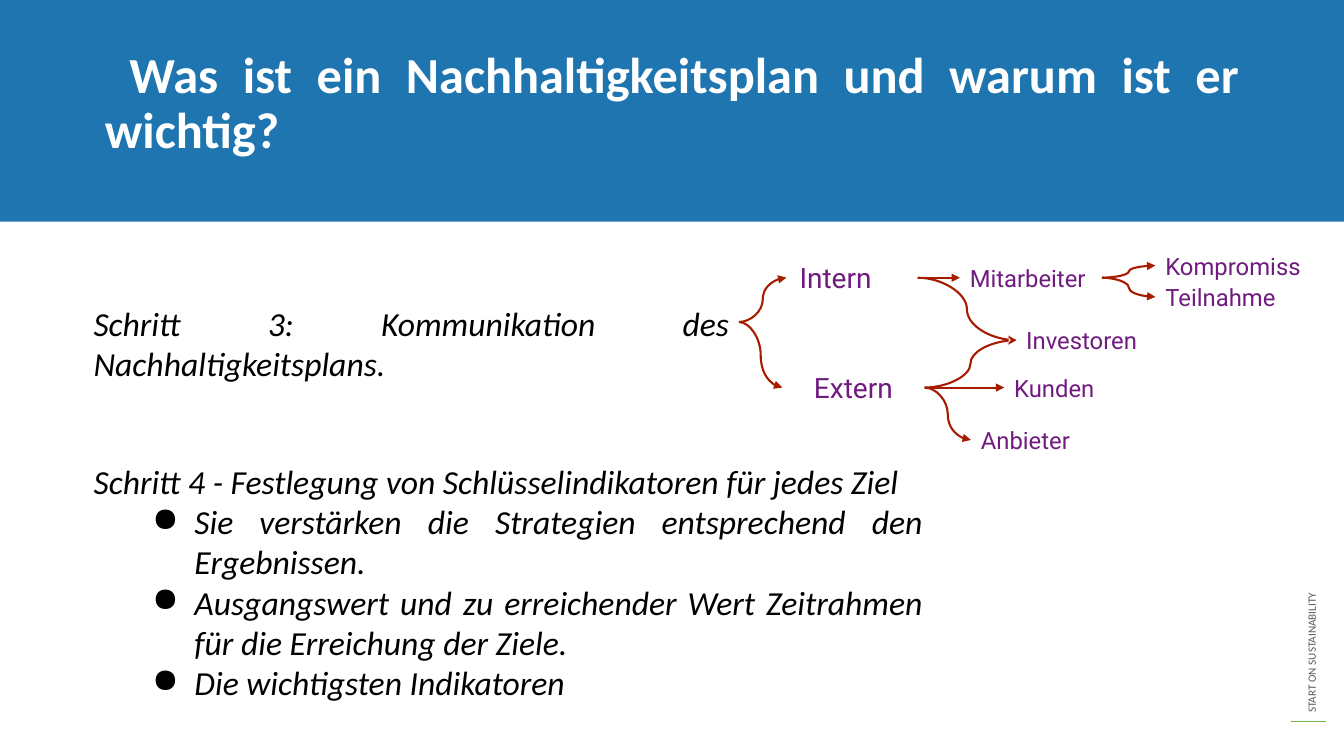
from pptx import Presentation
from pptx import util as u
from pptx.dml.color import RGBColor
from pptx.enum import shapes, text
from pptx.oxml import parse_xml
from pptx.oxml.ns import nsdecls, qn
from lxml import etree

Inches = u.Inches
BLUE, GREEN, PURPLE, RED = "1E75B0", "73B64B", "701C7F", "A61C00"
LEFT, CENTER, JUSTIFY = (text.PP_ALIGN.LEFT, text.PP_ALIGN.CENTER,
                         text.PP_ALIGN.JUSTIFY)
TOP, MIDDLE = text.MSO_ANCHOR.TOP, text.MSO_ANCHOR.MIDDLE


def write(box, place, lines, size, color, font="Calibri", align=LEFT,
          anchor=TOP, inset=(0.1, 0.05), bold=False, italic=False):
    """Place a text shape and fill it with one paragraph per line."""
    box.left, box.top, box.width, box.height = map(Inches, place)
    frame = box.text_frame
    frame.text = "\n".join(lines)
    frame.word_wrap = True
    frame.auto_size = text.MSO_AUTO_SIZE.NONE
    frame.vertical_anchor = anchor
    frame.margin_left = frame.margin_right = Inches(inset[0])
    frame.margin_top = frame.margin_bottom = Inches(inset[1])
    for para in frame.paragraphs:
        para.alignment = align
        for span in para.runs:
            span.font.name = font
            span.font.size = u.Pt(size)
            span.font.bold = bold
            span.font.italic = italic
            span.font.color.rgb = RGBColor.from_string(color)
    return box


def style_line(line, color, width, arrow=None):
    line.line.color.rgb = RGBColor.from_string(color)
    line.line.width = u.Pt(width)
    if arrow:
        tail = etree.SubElement(line.line._get_or_add_ln(), qn("a:tailEnd"))
        tail.set("type", arrow)
    etree.SubElement(line._element.spPr, qn("a:effectLst"))


deck = Presentation()
deck.slide_width, deck.slide_height = Inches(13.33), Inches(7.5)
page = deck.slides.add_slide(deck.slide_layouts[5])
items = page.shapes

# Side label and its green rule
label = write(items.add_textbox(0, 0, 0, 0), (10.78, 4.82, 4.46, 0.24),
              ["START ON SUSTAINABILITY"], 8, "595959")
label.rotation = 270
rule = items.add_connector(shapes.MSO_CONNECTOR.STRAIGHT, Inches(12.8),
                           Inches(7.16), Inches(13.15), Inches(7.16))
style_line(rule, GREEN, 1)

# Header band, with the title in front of it
band = items.add_shape(shapes.MSO_SHAPE.RECTANGLE, 0, 0,
                       deck.slide_width, Inches(2.2))
band.shadow.inherit = False
band.fill.solid()
band.fill.fore_color.rgb = RGBColor.from_string(BLUE)
band.line.fill.background()
title = write(items.title, (0.94, 0.45, 11.46, 0.88),
              [" Was ist ein Nachhaltigkeitsplan und warum ist er wichtig?"],
              36, "FFFFFF", align=JUSTIFY, bold=True)
title.text_frame.paragraphs[0].line_spacing = 0.9
title.text_frame.paragraphs[0].space_before = u.Pt(8)
band._element.addnext(title._element)

# Step 4 with its bullets
step4 = write(items.add_textbox(0, 0, 0, 0), (0.83, 4.52, 8.42, 2.52), [
    "Schritt 4 - Festlegung von Schlüsselindikatoren für jedes Ziel",
    "Sie verstärken die Strategien entsprechend den Ergebnissen.",
    "Ausgangswert und zu erreichender Wert Zeitrahmen für die Erreichung "
    "der Ziele.",
    "Die wichtigsten Indikatoren",
], 24, "000000", align=JUSTIFY, italic=True)
for para in step4.text_frame.paragraphs[1:]:
    props = para._p.get_or_add_pPr()
    props.set("marL", str(Inches(1)))
    props.set("indent", str(Inches(-0.42)))
    props.append(parse_xml(
        f'<a:buClr {nsdecls("a")}><a:srgbClr val="000000"/></a:buClr>'))
    props.append(parse_xml(f'<a:buChar {nsdecls("a")} char="●"/>'))

# Step 3 and its communication tree
nodes = {"Schritt 3": write(
    items.add_textbox(0, 0, 0, 0), (0.83, 2.9, 6.5, 0.59),
    ["Schritt 3: Kommunikation des Nachhaltigkeitsplans."], 24, "000000",
    align=JUSTIFY, inset=(0.1, 0.1), italic=True)}
for name, place, size, align, inset in [
    ("Intern", (7.8, 2.62, 1.3, 0.27), 20, LEFT, 0.13),
    ("Extern", (7.76, 3.69, 1.41, 0.31), 20, CENTER, 0.13),
    ("Mitarbeiter", (9.52, 2.6, 1.41, 0.31), 17, LEFT, 0.1),
    ("Kompromiss", (11.46, 2.48, 1.57, 0.31), 17, LEFT, 0.1),
    ("Teilnahme", (11.46, 2.79, 1.57, 0.31), 17, LEFT, 0.1),
    ("Investoren", (10.08, 3.22, 1.3, 0.31), 17, LEFT, 0.1),
    ("Kunden", (9.96, 3.69, 1.11, 0.31), 17, LEFT, 0.1),
    ("Anbieter", (9.63, 4.21, 1.57, 0.31), 17, LEFT, 0.1),
]:
    nodes[name] = write(items.add_textbox(0, 0, 0, 0), place, [name], size,
                        PURPLE, "Roboto", align, MIDDLE, (inset, inset))

branches = {
    "Schritt 3": ["Intern", "Extern"],
    "Intern": ["Mitarbeiter", "Investoren"],
    "Mitarbeiter": ["Kompromiss", "Teilnahme"],
    "Extern": ["Kunden", "Anbieter", "Investoren"],
}
for source, targets in branches.items():
    for target in targets:
        branch = items.add_connector(shapes.MSO_CONNECTOR.CURVE, 0, 0, 0, 0)
        branch.begin_connect(nodes[source], 3)
        branch.end_connect(nodes[target], 1)
        style_line(branch, RED, 1.5,
                   "stealth" if target == "Investoren" else "triangle")

deck.save("out.pptx")
